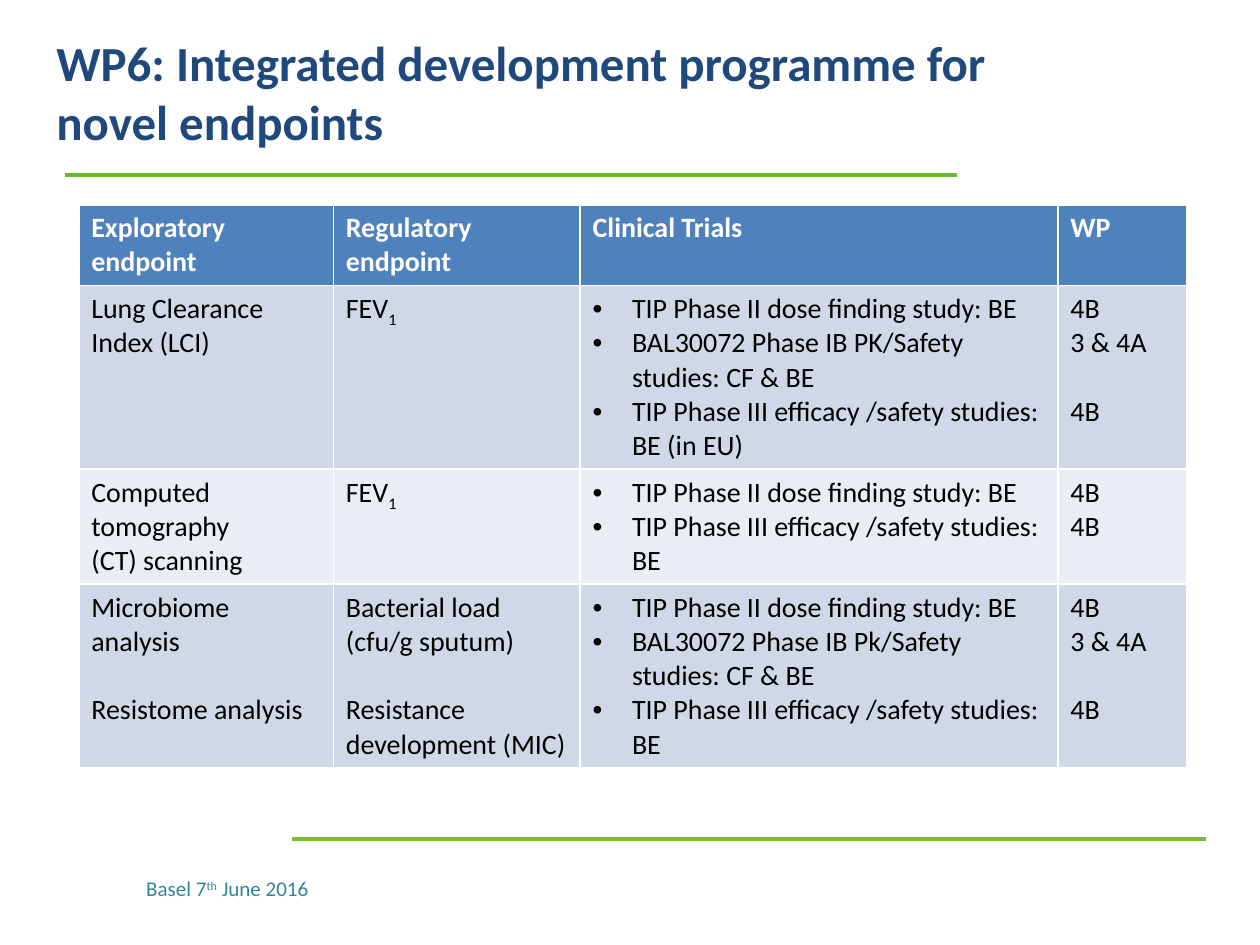
"""Build the WP6 slide on novel endpoints and their clinical trials."""
from dataclasses import dataclass
from typing import NamedTuple

import pptx
import pptx.dml.color
import pptx.enum.shapes
import pptx.enum.text
import pptx.util
from lxml import etree

Pt = pptx.util.Pt
RGB = pptx.dml.color.RGBColor.from_string
NS = "http://schemas.openxmlformats.org/drawingml/2006/main"


@dataclass(frozen=True)
class Theme:
    face: str = "Calibri"
    navy: str = "1F497D"
    teal: str = "31859C"
    head: str = "4F81BD"
    bands: tuple = ("D0D8E8", "E9EDF4")
    white: str = "FFFFFF"
    black: str = "000000"
    title: float = 28
    cell: float = 16
    foot: float = 12
    pitch: float = 19.53
    indent: float = 22.5


class Rule(NamedTuple):
    start: float
    end: float
    top: float
    width: float
    color: str


class Para(NamedTuple):
    text: str
    gap: bool = False
    bullet: bool = False


class Row(NamedTuple):
    lines: int
    cells: list


THEME = Theme()
RULES = [
    Rule(547, 37, 100, 2.25, "66BC29"),
    Rule(167, 689, 479.5, 2.5, "7ABC32"),
]
WIDTHS = [145.5, 141, 273, 73.5]


def plain(*texts: str) -> list[Para]:
    return [Para(text) for text in texts]


def split(*texts: str) -> list[Para]:
    return [Para(text, gap=text == texts[-1]) for text in texts]


def trials(*texts: str) -> list[Para]:
    return [Para(text, bullet=True) for text in texts]


PHASE2 = "TIP Phase II dose finding study: BE"
PHASE3 = "TIP Phase III efficacy /safety studies: BE"
PACKS = [Para("4B"), Para("3 & 4A"), Para("4B", gap=True)]
ROWS = [
    Row(2, [plain(name) for name in (
        "Exploratory endpoint", "Regulatory endpoint", "Clinical Trials", "WP")]),
    Row(5, [
        plain("Lung Clearance Index (LCI)"),
        plain("FEV|1"),
        trials(PHASE2, "BAL30072 Phase IB PK/Safety studies: CF & BE", PHASE3 + " (in EU)"),
        PACKS,
    ]),
    Row(3, [
        plain("Computed tomography", "(CT) scanning"),
        plain("FEV|1"),
        trials(PHASE2, PHASE3),
        plain("4B", "4B"),
    ]),
    Row(5, [
        split("Microbiome analysis", "Resistome analysis"),
        split("Bacterial load (cfu/g sputum)", "Resistance development (MIC)"),
        trials(PHASE2, "BAL30072 Phase IB Pk/Safety studies: CF & BE", PHASE3),
        PACKS,
    ]),
]


def style(par, size: float, color: str, bold: bool = False) -> None:
    font = par.font
    font.name, font.size, font.bold = THEME.face, Pt(size), bold
    font.color.rgb = RGB(color)


def write(par, text: str, shift: int) -> None:
    for i, part in enumerate(text.split("|")):
        run = par.add_run()
        run.text = part
        if i % 2:
            run._r.get_or_add_rPr().set("baseline", str(shift * 1000))


def mark(par) -> None:
    props = par._p.get_or_add_pPr()
    props.set("marL", str(Pt(THEME.indent)))
    props.set("indent", str(-Pt(THEME.indent)))
    etree.SubElement(props, f"{{{NS}}}buFont", typeface="Arial")
    etree.SubElement(props, f"{{{NS}}}buChar", char="•")


def fill(cell, paras: list[Para], back: str, color: str, bold: bool) -> None:
    cell.fill.solid()
    cell.fill.fore_color.rgb = RGB(back)
    frame = cell.text_frame
    for i, item in enumerate(paras):
        par = frame.add_paragraph() if i else frame.paragraphs[0]
        if item.gap:
            par.space_before = Pt(THEME.pitch)
        if item.bullet:
            mark(par)
        write(par, item.text, -25)
        style(par, THEME.cell, color, bold)


def grid(slide) -> None:
    highs = [row.lines * THEME.pitch + 7.2 for row in ROWS]
    table = slide.shapes.add_table(
        len(ROWS), len(WIDTHS), Pt(45), Pt(117),
        Pt(sum(WIDTHS)), Pt(sum(highs))).table
    for col, width in zip(table.columns, WIDTHS):
        col.width = Pt(width)
    for r, row in enumerate(ROWS):
        table.rows[r].height = Pt(highs[r])
        back = THEME.bands[(r - 1) % 2] if r else THEME.head
        color = THEME.black if r else THEME.white
        for c, paras in enumerate(row.cells):
            fill(table.cell(r, c), paras, back, color, r == 0)


def draw(slide, rule: Rule) -> None:
    line = slide.shapes.add_connector(
        pptx.enum.shapes.MSO_CONNECTOR.STRAIGHT,
        Pt(rule.start), Pt(rule.top), Pt(rule.end), Pt(rule.top))
    line.line.color.rgb = RGB(rule.color)
    line.line.width = Pt(rule.width)
    etree.SubElement(line._element.spPr, f"{{{NS}}}effectLst")


def head(slide) -> None:
    title = slide.shapes.title
    title.left, title.top, title.width, title.height = Pt(25), Pt(0), Pt(670), Pt(104.5)
    frame = title.text_frame
    frame.text = "WP6: Integrated development programme for\vnovel endpoints"
    frame.auto_size = pptx.enum.text.MSO_AUTO_SIZE.NONE
    frame.vertical_anchor = pptx.enum.text.MSO_ANCHOR.MIDDLE
    par = frame.paragraphs[0]
    par.alignment = pptx.enum.text.PP_ALIGN.LEFT
    style(par, THEME.title, THEME.navy, True)


def foot(slide) -> None:
    box = slide.shapes.add_textbox(Pt(76.5), Pt(497), Pt(124.5), Pt(21.5))
    box.text_frame.word_wrap = True
    par = box.text_frame.paragraphs[0]
    write(par, "Basel 7|th| June 2016", 30)
    style(par, THEME.foot, THEME.teal)


def main() -> None:
    deck = pptx.Presentation()
    deck.slide_width, deck.slide_height = Pt(720), Pt(540)
    slide = deck.slides.add_slide(deck.slide_layouts.get_by_name("Title Only"))
    for rule in RULES:
        draw(slide, rule)
    foot(slide)
    head(slide)
    grid(slide)
    deck.save("out.pptx")


if __name__ == "__main__":
    main()
